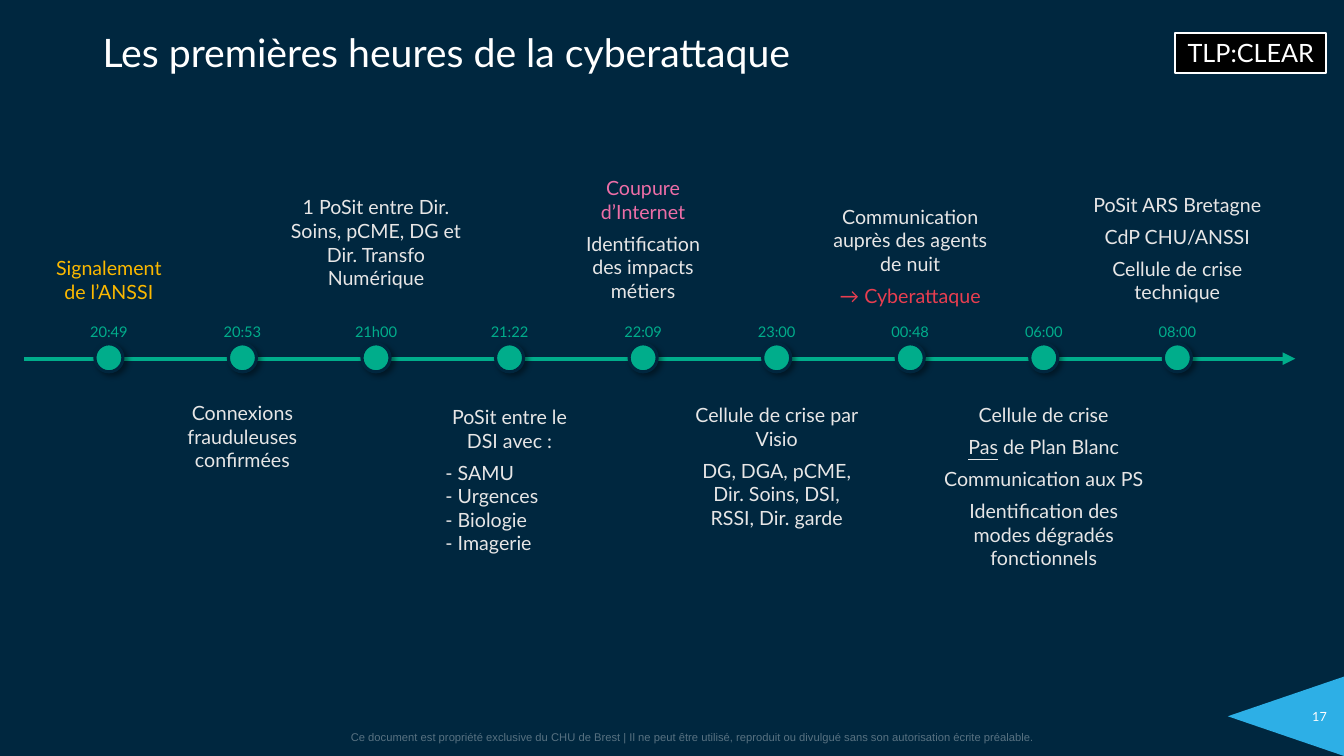
from lxml.etree import SubElement as Sub
from pptx import Presentation
from pptx.dml.color import RGBColor
from pptx.enum.shapes import MSO_CONNECTOR as Link, MSO_SHAPE as Kind
from pptx.enum.text import MSO_ANCHOR as Anchor, PP_ALIGN as Align
from pptx.oxml.ns import qn
from pptx.util import Pt

NAVY = RGBColor(0x00, 0x27, 0x3F)
RING = RGBColor(0x00, 0x26, 0x3E)
BLUE = RGBColor(0x2D, 0xAF, 0xE6)
GREEN = RGBColor(0x00, 0xAD, 0x8B)
GOLD = RGBColor(0xFB, 0xB8, 0x00)
PINK = RGBColor(0xED, 0x6E, 0xA7)
RED = RGBColor(0xE8, 0x3E, 0x50)
PALE = RGBColor(0xE7, 0xE6, 0xE6)
WHITE = RGBColor(0xFF, 0xFF, 0xFF)
BLACK = RGBColor(0x00, 0x00, 0x00)

WIDE, HIGH = 960, 540
STEP = 95.4
NARROW, MEDIUM, BROAD = 105.8, 138.2, 163.4

EVENTS = [
    ("20:49", 179.3, NARROW, [("Signalement de l’ANSSI", {"color": GOLD})]),
    ("20:53", 283, NARROW, ["Connexions frauduleuses confirmées"]),
    ("21h00", 136, MEDIUM,
     ["1 PoSit entre Dir. Soins, pCME, DG et Dir. Transfo Numérique"]),
    ("21:22", 285.8, NARROW,
     ["PoSit entre le DSI avec :"]
     + [("- " + name, {"align": Align.LEFT, "after": 0})
        for name in ("SAMU", "Urgences", "Biologie", "Imagerie")]),
    ("22:09", 122.4, NARROW,
     [("Coupure d’Internet", {"color": PINK}),
      "Identification des impacts métiers"]),
    ("23:00", 284.4, MEDIUM,
     ["Cellule de crise par Visio",
      "DG, DGA, pCME, Dir. Soins, DSI, RSSI, Dir. garde"]),
    ("00:48", 142.5, MEDIUM,
     ["Communication auprès des agents de nuit",
      ("→ Cyberattaque", {"color": RED})]),
    ("06:00", 284.4, BROAD,
     ["Cellule de crise",
      ("Pas| de Plan Blanc", {"under": True}),
      "Communication aux PS",
      "Identification des modes dégradés fonctionnels"]),
    ("08:00", 134, BROAD,
     ["PoSit ARS Bretagne", "CdP CHU/ANSSI", "Cellule de crise technique"]),
]


def write(frame, text, size=14, color=PALE, face="Lato", align=Align.CENTER,
          after=0, lead=None, under=False, alpha=None, first=True):
    para = frame.paragraphs[0] if first else frame.add_paragraph()
    para.alignment = align
    para.space_after = Pt(after)
    if lead:
        para.line_spacing = lead
    for place, part in enumerate(text.split("|") if under else [text]):
        run = para.add_run()
        run.text = part
        font = run.font
        font.name, font.size = face, Pt(size)
        font.color.rgb = color
        if under and place == 0:
            font.underline = True
        if alpha:
            tint = run._r.find(".//" + qn("a:srgbClr"))
            Sub(tint, qn("a:alpha"), val=str(alpha * 1000))


def frame(slide, box, anchor=Anchor.TOP, inset=True):
    body = slide.shapes.add_textbox(*map(Pt, box)).text_frame
    body.word_wrap = True
    body.vertical_anchor = anchor
    if not inset:
        body.margin_left = body.margin_right = 0
        body.margin_top = body.margin_bottom = 0
    return body


def header(slide, left, top, width, height):
    title = frame(slide, (left + 66.2, top, 750, height), Anchor.MIDDLE)
    write(title, "Les premières heures de la cyberattaque", size=28,
          color=WHITE, align=Align.LEFT, lead=0.9)
    badge = slide.shapes.add_shape(
        Kind.RECTANGLE, Pt(left + width - 120.5), Pt(top + 5.6),
        Pt(108), Pt(28.3))
    badge.shadow.inherit = False
    badge.fill.solid()
    badge.fill.fore_color.rgb = BLACK
    badge.line.color.rgb = WHITE
    badge.line.width = Pt(1.5)
    badge.text_frame.vertical_anchor = Anchor.MIDDLE
    write(badge.text_frame, "TLP:CLEAR", size=18, color=WHITE)


def footer(slide, left, top, width, height):
    right, low = left + width, top + height
    draw = slide.shapes.build_freeform(Pt(right), Pt(top))
    draw.add_line_segments([(Pt(right - 83), Pt(top + height / 2)),
                            (Pt(right), Pt(low))])
    corner = draw.convert_to_shape()
    corner.shadow.inherit = False
    corner.fill.solid()
    corner.fill.fore_color.rgb = BLUE
    corner.line.fill.background()
    note = frame(slide, (left + 116.6, low - 23.8, 756.7, 20.2),
                 Anchor.MIDDLE, False)
    write(note, "Ce document est propriété exclusive du CHU de Brest | "
          "Il ne peut être utilisé, reproduit ou divulgué sans son "
          "autorisation écrite préalable.",
          size=8, color=WHITE, face="Arial", alpha=35)
    page = frame(slide, (right - 34.8, top + 13.7, 34.6, 29.5),
                 Anchor.MIDDLE, False)
    write(page, "17", size=9, color=WHITE)


def axis(slide, left, right, level):
    line = slide.shapes.add_connector(
        Link.STRAIGHT, Pt(left), Pt(level), Pt(right), Pt(level))
    line.line.color.rgb = GREEN
    line.line.width = Pt(3)
    Sub(line.line._get_or_add_ln(), qn("a:tailEnd"), type="triangle")
    Sub(line._element.spPr, qn("a:effectLst"))


def dot(slide, mid, level, size=20):
    mark = slide.shapes.add_shape(
        Kind.OVAL, Pt(mid - size / 2), Pt(level - size / 2),
        Pt(size), Pt(size))
    mark.shadow.inherit = False
    mark.fill.solid()
    mark.fill.fore_color.rgb = GREEN
    mark.line.color.rgb = RING
    mark.line.width = Pt(2.25)
    glow = Sub(mark._element.spPr.find(qn("a:effectLst")), qn("a:outerShdw"),
               blurRad=str(Pt(4)), dist=str(Pt(3)), dir="2700000",
               algn="tl", rotWithShape="0")
    tint = Sub(glow, qn("a:srgbClr"), val=str(BLACK))
    Sub(tint, qn("a:alpha"), val="40000")


def timeline(slide, left, level, width):
    axis(slide, left, left + width, level + 0.6)
    for place, (hour, top, span, lines) in enumerate(EVENTS):
        mid = left + 60.5 + place * STEP
        dot(slide, mid, level)
        label = frame(slide, (mid - 24, level - 28.8, 48, 20))
        write(label, hour, size=10.5, color=GREEN)
        body = frame(slide, (mid - span / 2, top, span, 90))
        for rank, item in enumerate(lines):
            text, style = (item, {}) if isinstance(item, str) else item
            write(body, text, **{"after": 6, "first": rank == 0, **style})


def main():
    deck = Presentation()
    deck.slide_width, deck.slide_height = Pt(WIDE), Pt(HIGH)
    slide = deck.slides.add_slide(deck.slide_layouts[6])
    slide.background.fill.solid()
    slide.background.fill.fore_color.rgb = NAVY
    header(slide, 0, 18, WIDE, 42.5)
    timeline(slide, 17.3, 255.6, 907.9)
    footer(slide, 0, 483.3, WIDE, 56.7)
    deck.save("out.pptx")


if __name__ == "__main__":
    main()
